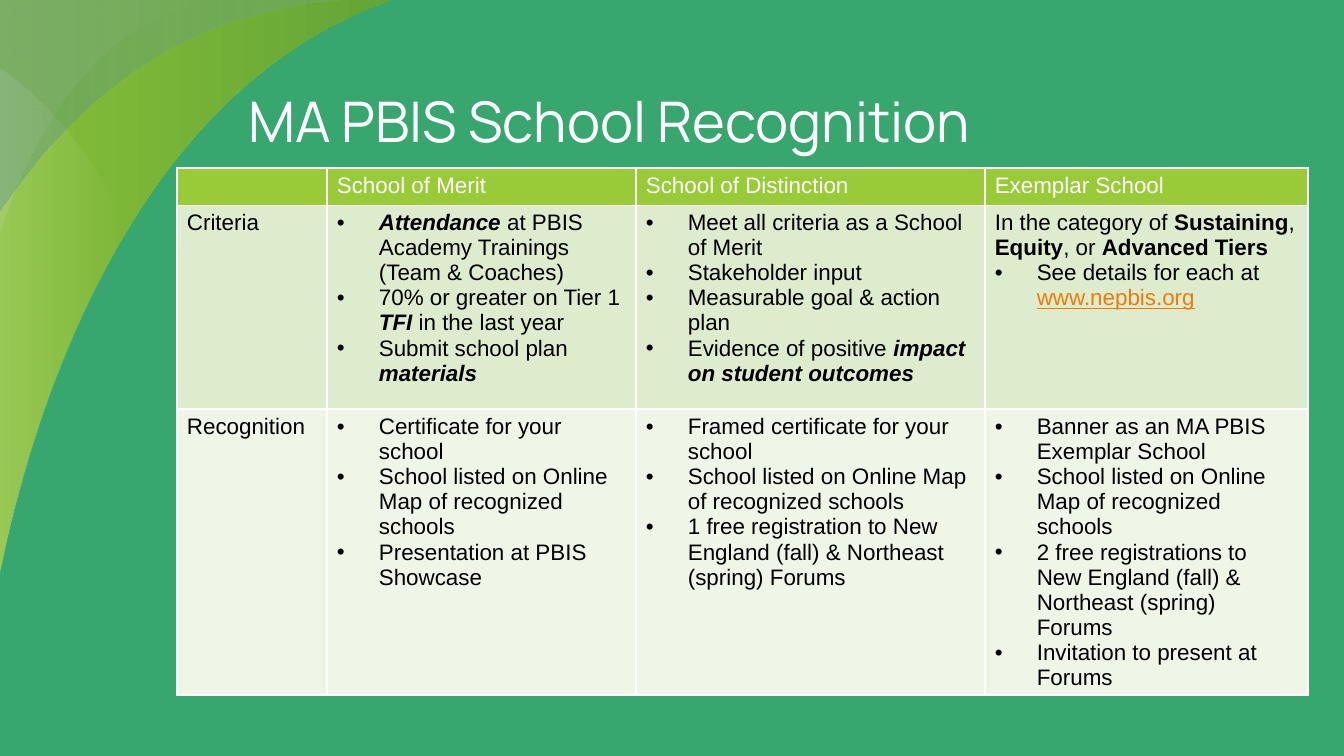
from lxml.etree import SubElement
from pptx import Presentation
from pptx.dml.color import RGBColor
from pptx.enum.text import MSO_ANCHOR, MSO_AUTO_SIZE, PP_ALIGN
from pptx.oxml.ns import qn
from pptx.util import Pt

SCALE = 914400 / 134.4
WHITE, BLACK, LIME, ORANGE = "FFFFFF", "000000", "99CB38", "EE7B08"
STRONG = {"bold": True}
STRESS = {"bold": True, "italic": True}
LINK = {"color": ORANGE, "underline": True}


def px(length):
    return round(length * SCALE)


def rgb(value):
    return RGBColor.from_string(value)


def put_text(paragraph, text, font="Arial", size=12, color=BLACK,
             bold=False, italic=False, underline=False):
    run = paragraph.add_run()
    run.text = text
    run.font.name = font
    run.font.size = Pt(size)
    run.font.color.rgb = rgb(color)
    run.font.bold = bold
    run.font.italic = italic
    run.font.underline = underline


def plain(*runs):
    return False, runs


def bullet(*runs):
    return True, runs


class Deck:
    indent = 42
    margins = (10, 5)

    def __init__(self, width, height, background):
        self.presentation = Presentation()
        self.presentation.slide_width = px(width)
        self.presentation.slide_height = px(height)
        layout = self.presentation.slide_layouts[5]
        self.slide = self.presentation.slides.add_slide(layout)
        self.slide.background.fill.solid()
        self.slide.background.fill.fore_color.rgb = rgb(background)

    def swoosh(self, outline, stops):
        anchors = [segment[-2:] for segment in outline]
        builder = self.slide.shapes.build_freeform(*anchors[0], scale=SCALE)
        builder.add_line_segments(anchors[1:], close=True)
        swoosh = builder.convert_to_shape()
        self.bend(swoosh, outline, min(x for x, _ in anchors), min(y for _, y in anchors))
        swoosh.shadow.inherit = False
        swoosh.line.fill.background()
        if len(stops) == 1:
            swoosh.fill.solid()
            swoosh.fill.fore_color.rgb = rgb(stops[0][0])
        else:
            swoosh.fill.gradient()
            swoosh.fill.gradient_angle = 0
            for stop, (color, _) in zip(swoosh.fill.gradient_stops, stops):
                stop.color.rgb = rgb(color)
        colors = swoosh._element.spPr.iter(qn("a:srgbClr"))
        for color, (_, opacity) in zip(list(colors), stops):
            SubElement(color, qn("a:alpha"), val=str(opacity * 1000))

    def bend(self, swoosh, outline, left, top):
        edges = list(swoosh._element.spPr.iter(qn("a:lnTo")))
        for edge, segment in zip(edges, outline[1:]):
            if len(segment) == 6:
                edge.clear()
                edge.tag = qn("a:cubicBezTo")
                for x, y in zip(segment[::2], segment[1::2]):
                    SubElement(edge, qn("a:pt"), x=str(x - left), y=str(y - top))

    def title(self, text, left, top, width, height):
        title = self.slide.shapes.title
        self.slide.shapes._spTree.append(title._element)
        title.left, title.top = px(left), px(top)
        title.width, title.height = px(width), px(height)
        frame = title.text_frame
        frame.auto_size = MSO_AUTO_SIZE.NONE
        frame.word_wrap = True
        frame.vertical_anchor = MSO_ANCHOR.TOP
        frame.margin_left = frame.margin_right = px(13)
        frame.margin_top = frame.margin_bottom = px(13)
        frame.paragraphs[0].alignment = PP_ALIGN.LEFT
        put_text(frame.paragraphs[0], text, font="Manrope", size=30, color=WHITE)

    def table(self, left, top, columns, heights, rows, fills):
        table = self.slide.shapes.add_table(
            len(rows), len(columns), px(left), px(top),
            px(sum(columns)), px(sum(heights))).table
        table.horz_banding = False
        for column, width in zip(table.columns, columns):
            column.width = px(width)
        for index, (row, height) in enumerate(zip(table.rows, heights)):
            row.height = px(height)
            for cell, paragraphs in zip(row.cells, rows[index]):
                self.cell(cell, paragraphs, fills[index], WHITE if index == 0 else BLACK)

    def cell(self, cell, paragraphs, fill, color):
        cell.margin_left = cell.margin_right = px(self.margins[0])
        cell.margin_top = cell.margin_bottom = px(self.margins[1])
        self.borders(cell)
        cell.fill.solid()
        cell.fill.fore_color.rgb = rgb(fill)
        frame = cell.text_frame
        for index, (bulleted, runs) in enumerate(paragraphs):
            paragraph = frame.add_paragraph() if index else frame.paragraphs[0]
            if bulleted:
                self.bullet(paragraph)
            for run in runs:
                text, style = (run, {}) if isinstance(run, str) else run
                put_text(paragraph, text, **{"color": color, **style})
            SubElement(paragraph._p, qn("a:endParaRPr"), sz="1200")

    def borders(self, cell):
        properties = cell._tc.get_or_add_tcPr()
        for side in "LRTB":
            line = SubElement(properties, qn(f"a:ln{side}"), w=str(Pt(1)))
            SubElement(SubElement(line, qn("a:solidFill")), qn("a:srgbClr"), val=WHITE)

    def bullet(self, paragraph):
        properties = paragraph._p.get_or_add_pPr()
        properties.set("marL", str(px(self.indent)))
        properties.set("indent", str(-px(self.indent)))
        SubElement(SubElement(properties, qn("a:buClr")), qn("a:srgbClr"), val=BLACK)
        SubElement(properties, qn("a:buFont"), typeface="Arial")
        SubElement(properties, qn("a:buChar"), char="•")

    def save(self):
        self.presentation.save("out.pptx")


def main():
    deck = Deck(1344, 756, "37A76F")

    corner, foot = (-179, 0), (-179, 664)
    tip, waist, base = (391, 0), (125, 234), (-15, 664)
    lower_edge = (*base, 7, 430, *waist)
    shade = [foot, corner, tip, (35, 129, -36, 664, -36, 664)]
    leaf = [tip, corner, foot, base, lower_edge, (185, 133, 270, 43, *tip)]
    glow = [waist, (42, 15, *corner, *corner), foot, base, lower_edge]
    inner = [(-52, 664), (-52, 664, -82, 44, 219, 0), corner, foot]
    haze = [(-157, 664), (-157, 664, -90, 0, 370, 0), corner, foot]
    deck.swoosh(shade, [("12102F", 54)])
    deck.swoosh(leaf, [(LIME, 100), ("63A537", 100)])
    deck.swoosh(glow, [(WHITE, 36), (WHITE, 0)])
    deck.swoosh(inner, [(WHITE, 18), (WHITE, 0)])
    deck.swoosh(haze, [("114CA0", 29), ("8AAFDC", 18)])

    deck.title("MA PBIS School Recognition", 235, 73, 844, 69)

    map_listing = bullet("School listed on Online Map of recognized schools")
    levels = [
        [plain()],
        [plain("School of Merit")],
        [plain("School of Distinction")],
        [plain("Exemplar School")],
    ]
    criteria = [
        [plain("Criteria")],
        [bullet(("Attendance", STRESS), " at PBIS Academy Trainings (Team & Coaches)"),
         bullet("70% or greater on Tier 1 ", ("TFI ", STRESS), "in the last year"),
         bullet("Submit school plan ", ("materials", STRESS))],
        [bullet("Meet all criteria as a School of Merit"),
         bullet("Stakeholder input"),
         bullet("Measurable goal & action plan"),
         bullet("Evidence of positive ", ("impact on student outcomes", STRESS))],
        [plain("In the category of ", ("Sustaining", STRONG), ", ", ("Equity", STRONG),
               ", or ", ("Advanced Tiers", STRONG)),
         bullet("See details for each at ", ("www.nepbis.org", LINK))],
    ]
    recognition = [
        [plain("Recognition")],
        [bullet("Certificate for your school"),
         map_listing,
         bullet("Presentation at PBIS Showcase")],
        [bullet("Framed certificate for your school"),
         map_listing,
         bullet("1 free registration to New England (fall) & Northeast (spring) Forums")],
        [bullet("Banner as an MA PBIS Exemplar School"),
         map_listing,
         bullet("2 free registrations to New England (fall) & Northeast (spring) Forums"),
         bullet("Invitation to present at Forums")],
    ]
    deck.table(177, 168, [150, 309, 349, 323], [36, 204, 286],
               [levels, criteria, recognition], [LIME, "DEECCE", "EFF6E8"])
    deck.save()


if __name__ == "__main__":
    main()
